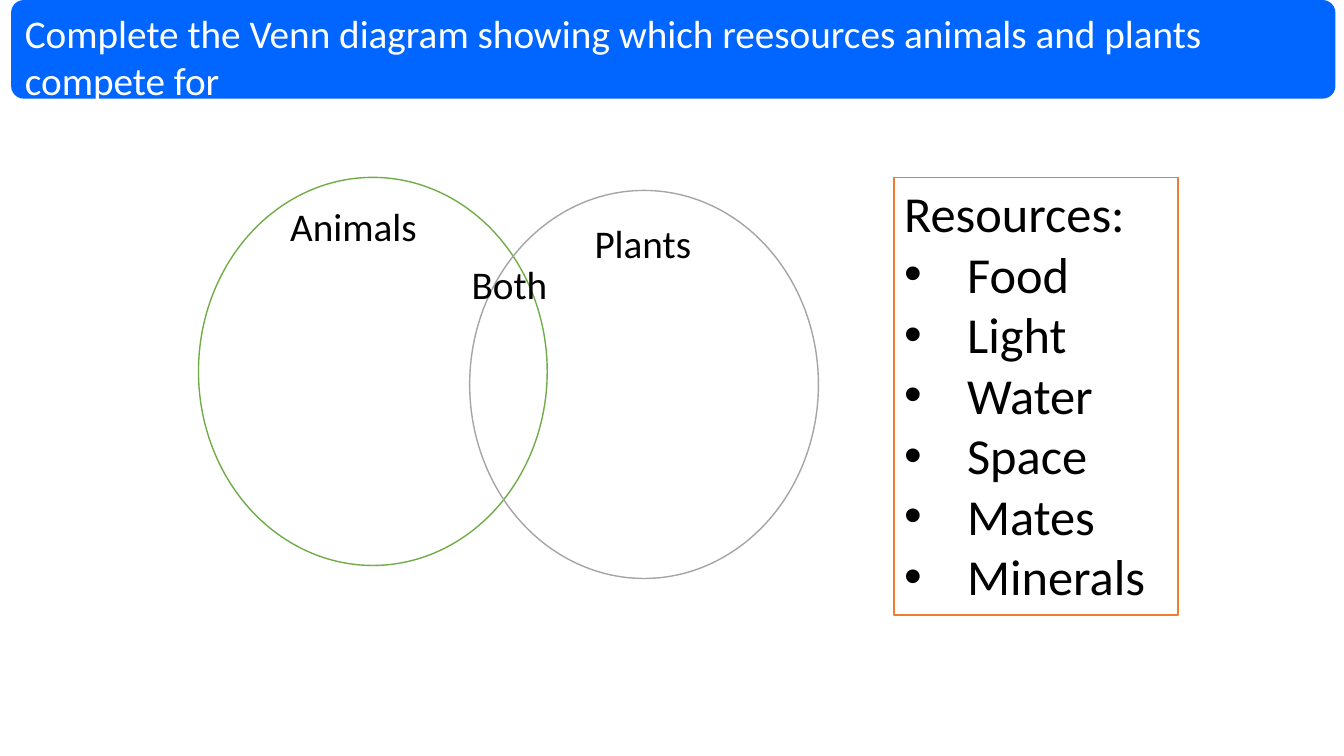
from pptx import Presentation
from pptx.dml.color import RGBColor
from pptx.enum.shapes import MSO_SHAPE as Kind
from pptx.enum.text import MSO_ANCHOR as Anchor, MSO_AUTO_SIZE as Fit, PP_ALIGN as Align
from pptx.oxml.ns import qn
from pptx.util import Pt
from lxml.etree import SubElement

# Content: boxes are left, top, width, height in points
TITLE = "Complete the Venn diagram showing which reesources animals and plants compete for"
BANNER = (7.9, 0, 946, 70.5)
CIRCLES = [(141.8, 126.7, "70AD47"), (335.5, 136, "A5A5A5")]
WIDE, HIGH = 249.1, 277.2
LABELS = [
    ("Animals", (200.2, 141.1, 105.8, 41)),
    ("Plants", (417.6, 153.4, 84.2, 41)),
    ("Both", (329.8, 182.2, 69.1, 41)),
]
HEAD = "Resources:"
ITEMS = ["Food", "Light", "Water", "Space", "Mates", "Minerals"]
LIST = (638.6, 126.7, 203, 312.5)
INDENT = 45


def color(code):
    return RGBColor.from_string(code)


def place(shape, box):
    shape.left, shape.top, shape.width, shape.height = map(Pt, box)


def style(para, size, code="000000"):
    para.alignment = Align.LEFT
    para.space_before = Pt(0)
    for run in para.runs:
        run.font.name = "Calibri"
        run.font.size = Pt(size)
        run.font.color.rgb = color(code)


def setup(frame, x=7.2, y=3.6):
    frame.auto_size = Fit.NONE
    frame.vertical_anchor = Anchor.TOP
    frame.margin_left = frame.margin_right = Pt(x)
    frame.margin_top = frame.margin_bottom = Pt(y)


deck = Presentation()
deck.slide_width, deck.slide_height = Pt(960), Pt(540)
slide = deck.slides.add_slide(deck.slide_layouts[1])
shapes = slide.shapes
title, body = shapes.title, slide.placeholders[1]

# Banner, set behind the title
banner = shapes.add_shape(Kind.ROUNDED_RECTANGLE, *map(Pt, BANNER))
banner.adjustments[0] = 0.13
banner.shadow.inherit = False
banner.fill.solid()
banner.fill.fore_color.rgb = color("0066FF")
banner.line.fill.background()
title._element.addprevious(banner._element)

# Title, inset to clear the round corners
place(title, BANNER)
title.text_frame.text = TITLE
setup(title.text_frame, 9.9, 6.3)
style(title.text_frame.paragraphs[0], 28, "FFFFFF")

# Venn circles
for left, top, code in CIRCLES:
    ring = shapes.add_shape(Kind.OVAL, *map(Pt, (left, top, WIDE, HIGH)))
    ring.shadow.inherit = False
    ring.fill.background()
    ring.line.color.rgb = color(code)
    ring.line.width = Pt(1)

# Circle labels
for word, box in LABELS:
    label = shapes.add_textbox(*map(Pt, box))
    label.text_frame.word_wrap = False
    label.text_frame.text = word
    style(label.text_frame.paragraphs[0], 28)

# Resource list
place(body, LIST)
body.fill.solid()
body.fill.fore_color.rgb = color("FFFFFF")
body.line.color.rgb = color("ED7D31")
body.line.width = Pt(1)
frame = body.text_frame
frame.text = "\n".join([HEAD] + ITEMS)
setup(frame)
for i, para in enumerate(frame.paragraphs):
    style(para, 36)
    props = para._p.get_or_add_pPr()
    indent = Pt(INDENT if i else 0)
    props.set("marL", str(indent))
    props.set("indent", str(-indent))
    if i:
        SubElement(props, qn("a:buFont")).set("typeface", "Arial")
        SubElement(props, qn("a:buChar")).set("char", "•")
    else:
        SubElement(props, qn("a:buNone"))

deck.save("out.pptx")
